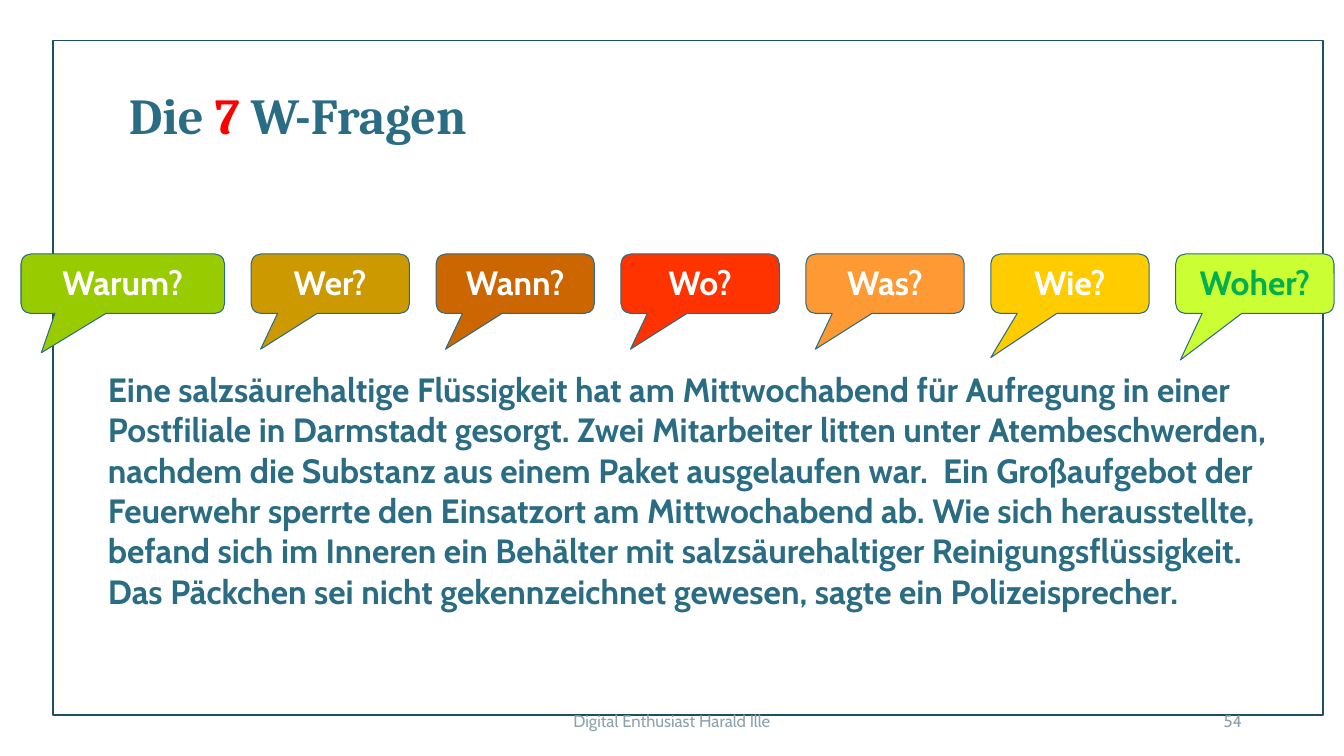
from pptx import Presentation
from pptx.dml.color import RGBColor
from pptx.enum import shapes, text
from pptx.util import Cm, Pt

PETROL = RGBColor(0x2A, 0x6C, 0x83)
DARK_PETROL = RGBColor(0x1F, 0x50, 0x61)
WHITE = RGBColor(0xFF, 0xFF, 0xFF)
RED = RGBColor(0xFF, 0x00, 0x00)
GREEN = RGBColor(0x00, 0xB0, 0x50)
GREY = RGBColor(0x8E, 0xA2, 0xAD)
LIME = RGBColor(0x99, 0xCC, 0x00)
OCHRE = RGBColor(0xCC, 0x99, 0x00)
BROWN = RGBColor(0xCC, 0x66, 0x00)
SCARLET = RGBColor(0xFF, 0x33, 0x00)
ORANGE = RGBColor(0xFF, 0x99, 0x33)
YELLOW = RGBColor(0xFF, 0xCC, 0x00)
LIGHT_LIME = RGBColor(0xCC, 0xFF, 0x33)

HEADING_FONT, BODY_FONT = "Cambria", "Cabin"
LEFT, CENTER, RIGHT = text.PP_ALIGN.LEFT, text.PP_ALIGN.CENTER, text.PP_ALIGN.RIGHT

# Question, fill, text colour, width in cm, tip of the pointer
QUESTIONS = [
    ("Warum?", LIME, WHITE, 5.13, (-0.4, 1.16)),
    ("Wer?", OCHRE, WHITE, 3.99, (-0.44, 1.1)),
    ("Wann?", BROWN, WHITE, 3.99, (-0.44, 1.1)),
    ("Wo?", SCARLET, WHITE, 3.99, (-0.44, 1.1)),
    ("Was?", ORANGE, WHITE, 3.99, (-0.44, 1.1)),
    ("Wie?", YELLOW, WHITE, 3.99, (-0.5, 1.24)),
    ("Woher?", LIGHT_LIME, GREEN, 3.99, (-0.47, 1.28)),
]
QUESTION_GAP = 0.67

REPORT = (
    "Eine salzsäurehaltige Flüssigkeit hat am Mittwochabend für Aufregung in einer "
    "Postfiliale in Darmstadt gesorgt. Zwei Mitarbeiter litten unter Atembeschwerden, "
    "nachdem die Substanz aus einem Paket ausgelaufen war.  Ein Großaufgebot der "
    "Feuerwehr sperrte den Einsatzort am Mittwochabend ab. Wie sich herausstellte, "
    "befand sich im Inneren ein Behälter mit salzsäurehaltiger Reinigungsflüssigkeit. "
    "Das Päckchen sei nicht gekennzeichnet gewesen, sagte ein Polizeisprecher."
)


def set_font(font, name, size, color, bold):
    font.name, font.size, font.bold = name, Pt(size), bold
    font.color.rgb = color


def add_box(slide, kind, left, top, width, height, fill, line, line_width):
    shape = slide.shapes.add_shape(kind, Cm(left), Cm(top), Cm(width), Cm(height))
    shape.shadow.inherit = False
    shape.fill.solid()
    shape.fill.fore_color.rgb = fill
    shape.line.color.rgb = line
    shape.line.width = Pt(line_width)
    return shape


def add_text(slide, left, top, width, height, words, size, color,
             bold=False, align=LEFT, anchor=text.MSO_ANCHOR.TOP):
    box = slide.shapes.add_textbox(Cm(left), Cm(top), Cm(width), Cm(height))
    frame = box.text_frame
    frame.word_wrap = True
    frame.vertical_anchor = anchor
    paragraph = frame.paragraphs[0]
    paragraph.text = words
    paragraph.alignment = align
    set_font(paragraph.font, BODY_FONT, size, color, bold)


def add_title(slide, left, top, width, height):
    box = slide.shapes.add_textbox(Cm(left), Cm(top), Cm(width), Cm(height))
    box.text_frame.word_wrap = False
    paragraph = box.text_frame.paragraphs[0]
    for words, color in (("Die ", PETROL), ("7", RED), (" W-Fragen", PETROL)):
        run = paragraph.add_run()
        run.text = words
        set_font(run.font, HEADING_FONT, 36, color, True)


def add_questions(slide, left, top, height):
    """Place the speech bubbles in a row with equal gaps."""
    for question, fill, color, width, tip in QUESTIONS:
        bubble = add_box(slide, shapes.MSO_SHAPE.ROUNDED_RECTANGULAR_CALLOUT,
                         left, top, width, height, fill, PETROL, 0.75)
        bubble.adjustments[0], bubble.adjustments[1] = tip
        frame = bubble.text_frame
        frame.vertical_anchor = text.MSO_ANCHOR.TOP
        paragraph = frame.paragraphs[0]
        paragraph.text = question
        paragraph.alignment = CENTER
        set_font(paragraph.font, BODY_FONT, 24, color, True)
        left += width + QUESTION_GAP


def add_footer(slide, top, height):
    middle = text.MSO_ANCHOR.MIDDLE
    add_text(slide, 11.22, top, 11.43, height, "Digital Enthusiast Harald Ille",
             12, GREY, align=CENTER, anchor=middle)
    add_text(slide, 23.93, top, 7.62, height, "54", 12, GREY, align=RIGHT, anchor=middle)


def main():
    presentation = Presentation()
    presentation.slide_width, presentation.slide_height = Cm(33.87), Cm(19.05)
    slide = presentation.slides.add_slide(presentation.slide_layouts[6])
    add_box(slide, shapes.MSO_SHAPE.RECTANGLE, 1.34, 1.02, 32, 17,
            WHITE, DARK_PETROL, 1)
    add_title(slide, 3, 2, 11.8, 1.78)
    add_text(slide, 2.47, 9.17, 30.07, 6.07, REPORT, 24, PETROL, bold=True)
    add_questions(slide, 0.53, 6.4, 1.5)
    add_footer(slide, 17.65, 1.02)
    presentation.save("out.pptx")


if __name__ == "__main__":
    main()
